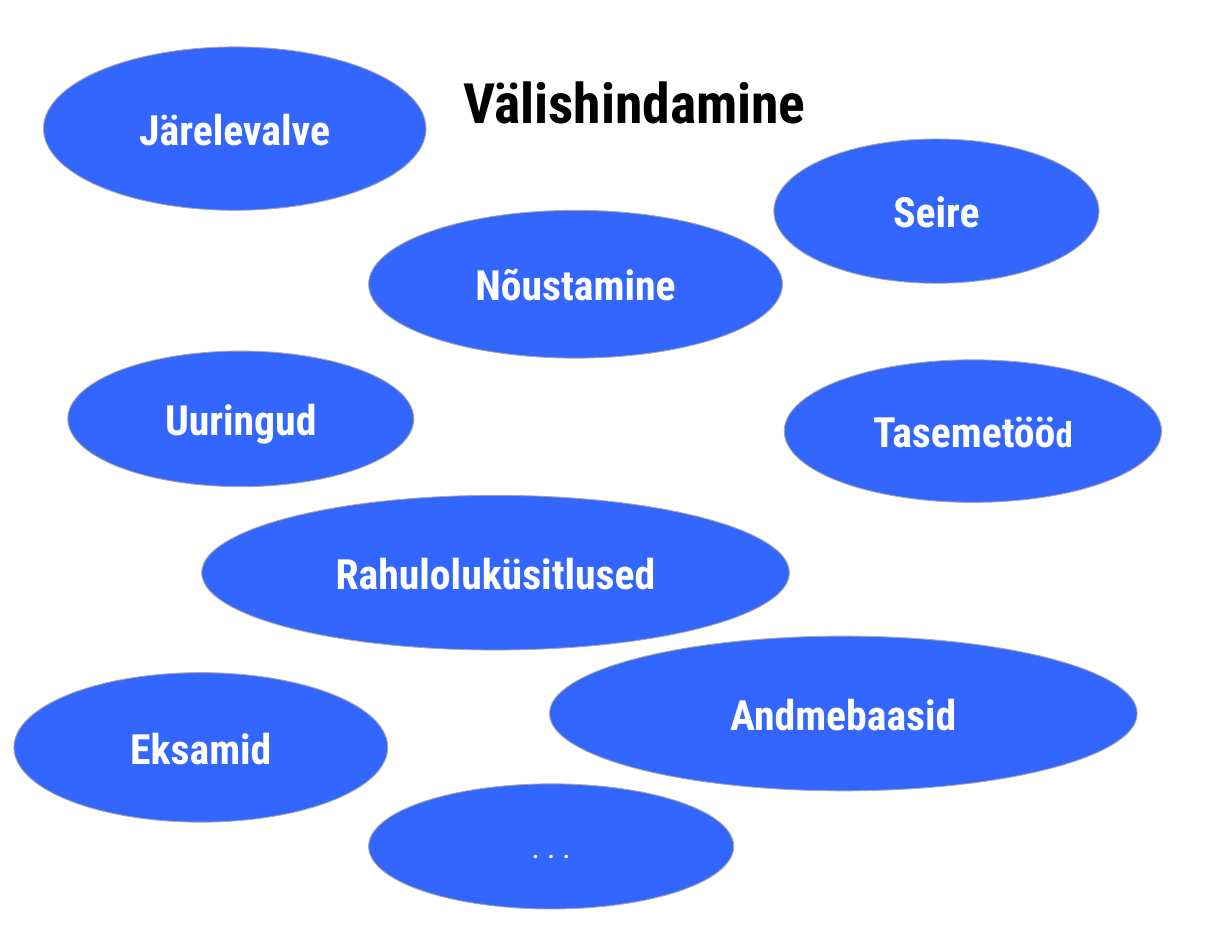
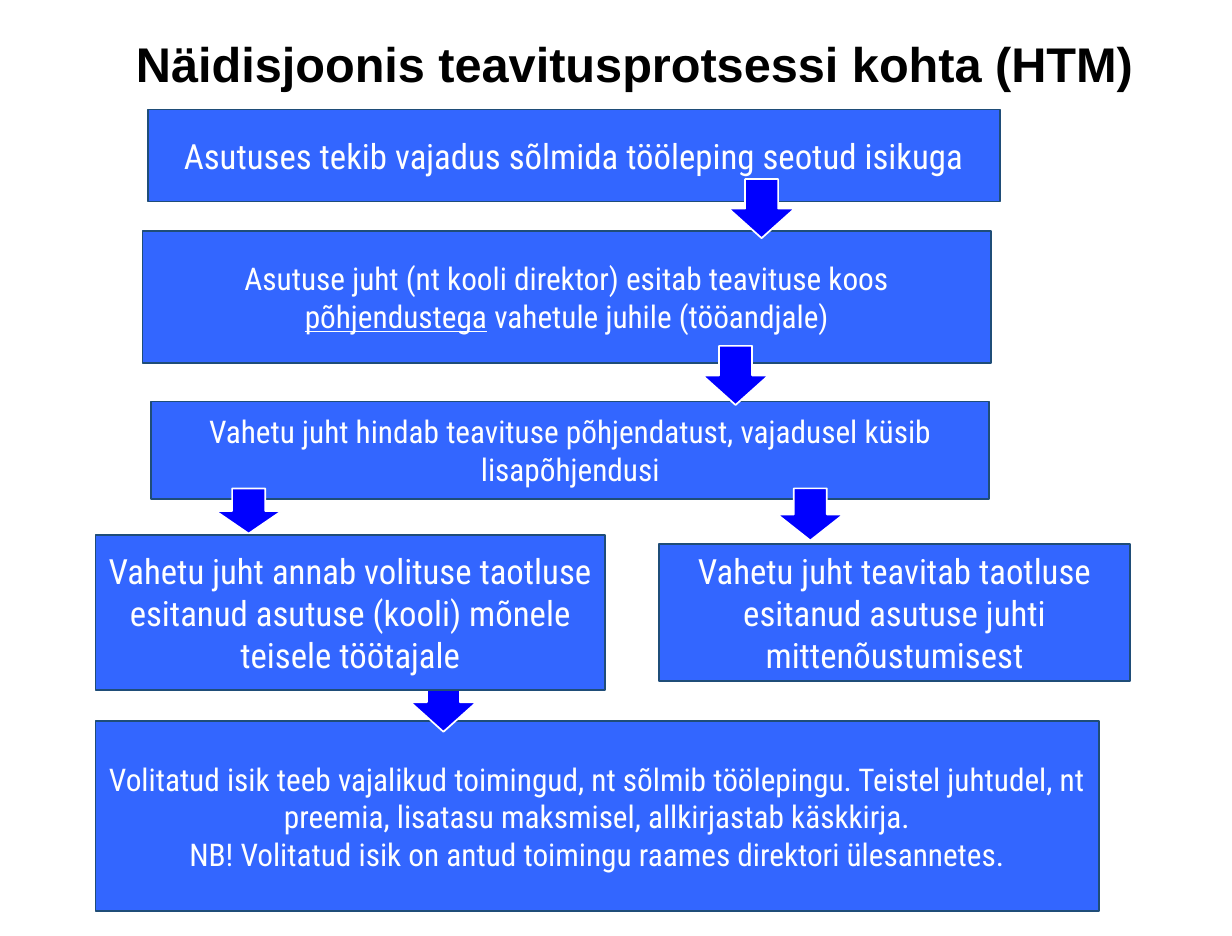
from dataclasses import dataclass
from typing import NamedTuple

from pptx import Presentation
from pptx.dml.color import RGBColor as RGB
from pptx.enum.shapes import MSO_SHAPE as SHAPE
from pptx.enum.text import MSO_ANCHOR as ANCHOR, MSO_AUTO_SIZE as AUTOSIZE, PP_ALIGN as ALIGN
from pptx.util import Pt


@dataclass(frozen=True)
class Theme:
    fill: RGB = RGB(0x33, 0x66, 0xFF)
    arrow: RGB = RGB(0x00, 0x00, 0xFF)
    oval_line: RGB = RGB(0xA5, 0xA5, 0xA5)
    box_line: RGB = RGB(0x1F, 0x4D, 0x78)
    light: RGB = RGB(0xFF, 0xFF, 0xFF)
    dark: RGB = RGB(0x00, 0x00, 0x00)
    font: str = "Roboto Condensed"
    title_font: str = "Arial"
    title: int = 32
    long_title: int = 28
    topic: int = 24
    large: int = 20
    body: int = 18


class Box(NamedTuple):
    x: float
    y: float
    w: float
    h: float

    def inside(self, area):
        return Box(area.x + self.x, area.y + self.y, self.w, self.h)

    def lengths(self):
        return [Pt(v) for v in self]


T = Theme()
ARROW_W = 38

TOPICS = [
    (Box(17, 0, 220, 94), "Järelevalve"),
    (Box(0, 360, 215, 86), "Eksamid"),
    (Box(437, 53, 187, 83), "Seire"),
    (Box(31, 175, 199, 78), "Uuringud"),
    (Box(443, 180, 217, 82), "Tasemetööd"),
    (Box(204, 94, 238, 85), "Nõustamine"),
    (Box(108, 258, 338, 89), "Rahuloluküsitlused"),
    (Box(308, 339, 338, 89), "Andmebaasid"),
]
MORE = Box(204, 424, 210, 72)

STEPS = [
    (Box(30, 0, 490, 53), T.large,
     ["Asutuses tekib vajadus sõlmida tööleping seotud isikuga"]),
    (Box(27, 70, 488, 76), T.body,
     ["Asutuse juht (nt kooli direktor) esitab teavituse koos "
      "põhjendustega vahetule juhile (tööandjale)"]),
    (Box(32, 168, 482, 56), T.body,
     ["Vahetu juht hindab teavituse põhjendatust, vajadusel küsib lisapõhjendusi"]),
    (Box(0, 352, 577, 109), T.body,
     ["Volitatud isik teeb vajalikud toimingud, nt sõlmib töölepingu. Teistel juhtudel, "
      "nt preemia, lisatasu maksmisel, allkirjastab käskkirja.",
      "NB! Volitatud isik on antud toimingu raames direktori ülesannetes."]),
]
BRANCHES = [
    (Box(324, 250, 271, 79), T.large,
     ["Vahetu juht teavitab taotluse esitanud asutuse juhti mittenõustumisest"]),
    (Box(0, 245, 293, 89), T.large,
     ["Vahetu juht annab volituse taotluse esitanud asutuse (kooli) mõnele teisele töötajale"]),
]
ARROWS = [(364, 40, 34), (349, 136, 34), (69, 218, 26), (181, 324, 34), (392, 218, 30)]

STYLED_WORDS = {
    "põhjendustega": {"underline": True},
    "Tasemetööd": {"tail_size": T.large},
}


def set_font(p, name, size, color, bold):
    p.font.name = name
    p.font.size = Pt(size)
    p.font.bold = bold
    p.font.color.rgb = color


def add_runs(p, text):
    word = next((w for w in STYLED_WORDS if w in text), None)
    if word is None:
        p.add_run().text = text
        return
    style = STYLED_WORDS[word]
    before, after = text.split(word)
    if "tail_size" in style:
        before, word = before + word[:-1], word[-1]
    for part in filter(None, (before, word, after)):
        r = p.add_run()
        r.text = part
        if part == word:
            if "underline" in style:
                r.font.underline = True
            if "tail_size" in style:
                r.font.size = Pt(style["tail_size"])


def add_shape(s, kind, box, fill, line, width):
    sp = s.shapes.add_shape(kind, *box.lengths())
    sp.shadow.inherit = False
    sp.fill.solid()
    sp.fill.fore_color.rgb = fill
    sp.line.color.rgb = line
    sp.line.width = Pt(width)
    return sp


def add_label(sp, lines, size, bold=False):
    tf = sp.text_frame
    tf.word_wrap = True
    tf.vertical_anchor = ANCHOR.MIDDLE
    for i, text in enumerate(lines):
        p = tf.add_paragraph() if i else tf.paragraphs[0]
        p.alignment = ALIGN.CENTER
        set_font(p, T.font, size, T.light, bold)
        add_runs(p, text)


def add_title(s, box, text, font, size, align):
    sp = s.shapes.title
    sp.left, sp.top, sp.width, sp.height = box.lengths()
    tf = sp.text_frame
    tf.text = text
    tf.word_wrap = True
    tf.auto_size = AUTOSIZE.NONE
    tf.vertical_anchor = ANCHOR.MIDDLE
    p = tf.paragraphs[0]
    p.alignment = align
    set_font(p, font, size, T.dark, True)


def add_topics(s, area):
    ovals = [(box, text, T.topic, True) for box, text in TOPICS]
    for box, text, size, bold in ovals + [(MORE, ". . .", T.body, False)]:
        sp = add_shape(s, SHAPE.OVAL, box.inside(area), T.fill, T.oval_line, 0.5)
        add_label(sp, [text], size, bold)


def add_steps(s, area, steps):
    for box, size, lines in steps:
        sp = add_shape(s, SHAPE.RECTANGLE, box.inside(area), T.fill, T.box_line, 1)
        add_label(sp, lines, size)


def add_flow(s, area):
    add_steps(s, area, STEPS)
    for x, y, h in ARROWS:
        add_shape(s, SHAPE.DOWN_ARROW, Box(x, y, ARROW_W, h).inside(area), T.arrow, T.light, 1)
    add_steps(s, area, BRANCHES)


def main():
    prs = Presentation()
    prs.slide_width, prs.slide_height = Pt(708.5), Pt(538.5)
    layout = prs.slide_layouts.get_by_name("Title Only")

    s = prs.slides.add_slide(layout)
    add_title(s, Box(60, 35, 610, 46), "Välishindamine", T.font, T.title, ALIGN.CENTER)
    add_topics(s, Box(8, 27, 660, 496))

    s = prs.slides.add_slide(layout)
    add_title(s, Box(71, 14, 610, 44), "Näidisjoonis teavitusprotsessi kohta (HTM)",
              T.title_font, T.long_title, ALIGN.LEFT)
    add_flow(s, Box(55, 63, 595, 461))

    prs.save("out.pptx")


if __name__ == "__main__":
    main()
